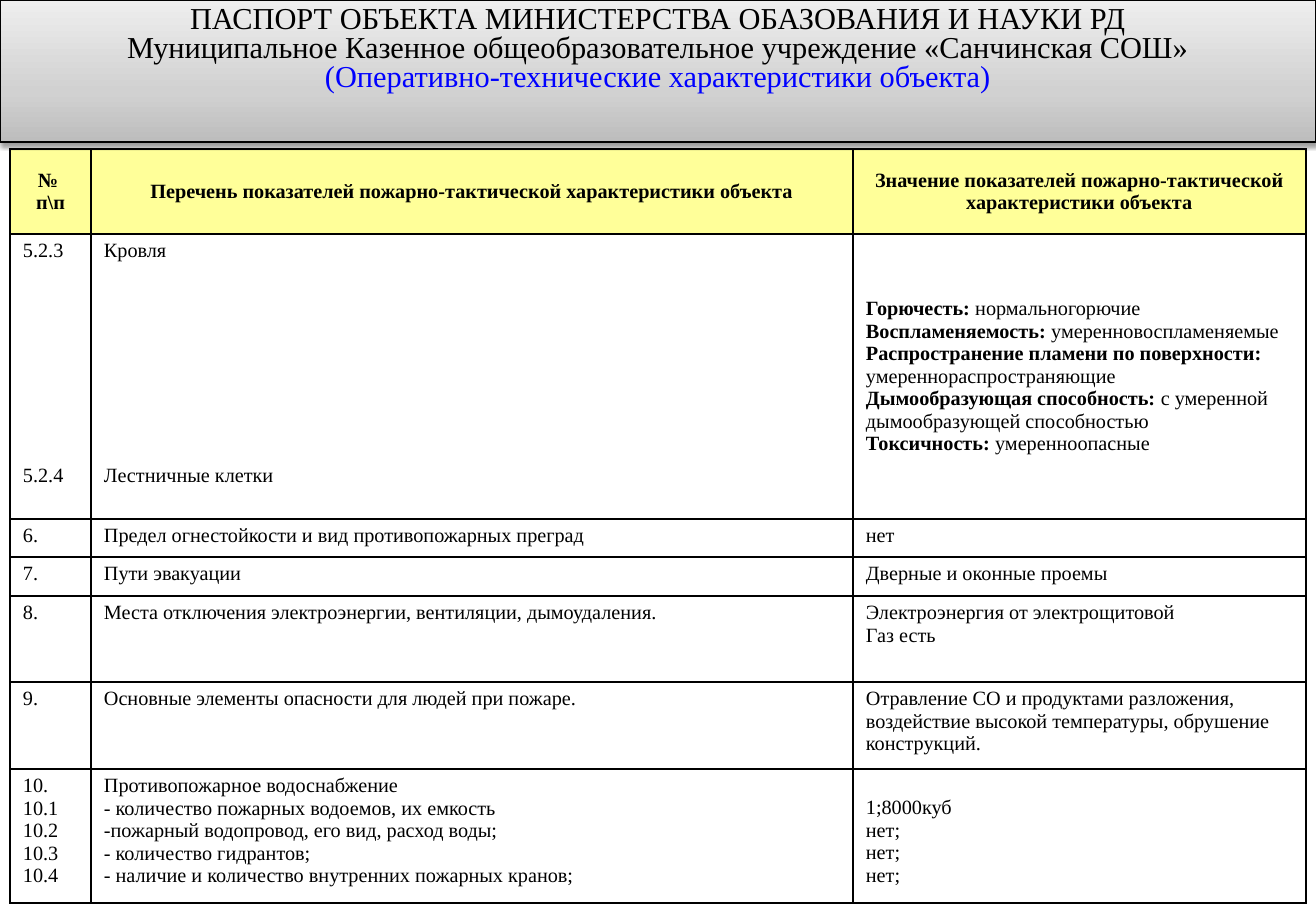
from pptx import Presentation
from pptx.dml.color import RGBColor
from pptx.enum.shapes import MSO_SHAPE
from pptx.enum.text import MSO_ANCHOR, MSO_AUTO_SIZE, PP_ALIGN
from pptx.oxml.ns import qn
from pptx.util import Emu, Pt
from lxml.etree import SubElement
from copy import deepcopy

EMU_PER_PX = 7526
FONT = "Times New Roman"
BLACK, BLUE, WHITE, YELLOW = "000000", "0000FF", "FFFFFF", "FFFF99"

HEADING = [
    ("ПАСПОРТ ОБЪЕКТА МИНИСТЕРСТВА ОБАЗОВАНИЯ И НАУКИ РД", BLACK),
    ("Муниципальное Казенное общеобразовательное учреждение «Санчинская СОШ»", BLACK),
    ("(Оперативно-технические характеристики объекта)", BLUE),
]
BANNER_STOPS = [(0, "BDBDBD"), (0.35, "D1D1D1"), (1, "EEEEEE")]
COLUMN_WIDTHS = [81, 762, 453]
ROW_HEIGHTS = [85, 285, 38, 39, 86, 87, 134]
INDICATORS = [
    ["№ \nп\\п",
     "Перечень показателей пожарно-тактической характеристики объекта",
     "Значение показателей пожарно-тактической характеристики объекта"],
    ["5.2.3\n5.2.4", "Кровля\nЛестничные клетки", ""],
    ["6.", "Предел огнестойкости и вид противопожарных преград", "нет"],
    ["7.", "Пути эвакуации", "Дверные и оконные проемы"],
    ["8.", "Места отключения электроэнергии, вентиляции, дымоудаления.",
     "Электроэнергия от электрощитовой\nГаз есть"],
    ["9.", "Основные элементы опасности для людей при пожаре.",
     "Отравление СО и продуктами разложения, воздействие высокой температуры, "
     "обрушение конструкций."],
    ["10.\n10.1\n10.2\n10.3\n10.4",
     "Противопожарное водоснабжение\n количество пожарных водоемов, их емкость\n"
     "пожарный водопровод, его вид, расход воды;\n количество гидрантов;\n"
     " наличие и количество внутренних пожарных кранов;",
     "1;8000куб\nнет;\nнет;\nнет;"],
]
ROOF_PROPERTIES = [
    ("Горючесть: ", "нормальногорючие"),
    ("Воспламеняемость: ", "умеренновоспламеняемые"),
    ("Распространение пламени по поверхности:", ""),
    ("", "умереннораспространяющие"),
    ("Дымообразующая способность: ", "с умеренной дымообразующей способностью"),
    ("Токсичность: ", "умеренноопасные"),
]


def px(length):
    return Emu(length * EMU_PER_PX)


def color(value):
    return RGBColor.from_string(value)


def format_run(run, size, bold=False, ink=BLACK):
    run.font.name = FONT
    run.font.size = Pt(size)
    run.font.bold = bold
    run.font.color.rgb = color(ink)


def add_border(cell):
    properties = cell._tc.get_or_add_tcPr()
    for position, side in enumerate(("lnL", "lnR", "lnT", "lnB")):
        border = SubElement(properties, qn(f"a:{side}"), w=str(Pt(1)))
        ink = SubElement(border, qn("a:solidFill"))
        SubElement(ink, qn("a:srgbClr"), val=BLACK)
        properties.insert(position, border)


def add_dash(paragraph):
    properties = paragraph._p.get_or_add_pPr()
    properties.set("marL", "0")
    properties.set("indent", "0")
    SubElement(properties, qn("a:buFont"), typeface=FONT)
    SubElement(properties, qn("a:buChar"), char="-")


def fill_cell(cell, text, header):
    cell.fill.solid()
    cell.fill.fore_color.rgb = color(YELLOW if header else WHITE)
    cell.margin_left = cell.margin_right = px(13)
    cell.margin_top = cell.margin_bottom = px(6)
    cell.vertical_anchor = MSO_ANCHOR.MIDDLE if header else MSO_ANCHOR.TOP
    add_border(cell)
    cell.text_frame.text = text
    for paragraph in cell.text_frame.paragraphs:
        paragraph.alignment = PP_ALIGN.CENTER if header else PP_ALIGN.LEFT
        for run in paragraph.runs:
            format_run(run, 12, header)


def fill_properties(cell):
    cell.vertical_anchor = MSO_ANCHOR.MIDDLE
    frame = cell.text_frame
    frame.text = "\n".join(label for label, _ in ROOF_PROPERTIES)
    for paragraph, (_, value) in zip(frame.paragraphs, ROOF_PROPERTIES):
        for run in paragraph.runs:
            format_run(run, 12, True)
        if value:
            value_run = paragraph.add_run()
            value_run.text = value
            format_run(value_run, 12)


def add_indicators(slide):
    indicators = slide.shapes.add_table(
        len(ROW_HEIGHTS), len(COLUMN_WIDTHS), px(10), px(149),
        px(sum(COLUMN_WIDTHS)), px(sum(ROW_HEIGHTS))).table
    indicators.first_row = indicators.horz_banding = False
    for column, width in zip(indicators.columns, COLUMN_WIDTHS):
        column.width = px(width)
    for row, height in zip(indicators.rows, ROW_HEIGHTS):
        row.height = px(height)
    for r, texts in enumerate(INDICATORS):
        for c, text in enumerate(texts):
            fill_cell(indicators.cell(r, c), text, r == 0)
    fill_properties(indicators.cell(1, 2))
    for c in (0, 1):
        stairs = indicators.cell(1, c).text_frame.paragraphs[1]
        stairs.space_before = Pt(119.5)
    for supply in indicators.cell(6, 1).text_frame.paragraphs[1:]:
        add_dash(supply)
    indicators.cell(6, 2).margin_top = px(28)


def add_banner(slide):
    banner = slide.shapes.add_shape(MSO_SHAPE.RECTANGLE, 0, 0, px(1316), px(142))
    banner.fill.gradient()
    banner.fill.gradient_angle = 90
    stop_list = banner._element.spPr.find(qn("a:gradFill")).find(qn("a:gsLst"))
    stop_list.append(deepcopy(stop_list[-1]))
    for stop, (position, shade) in zip(banner.fill.gradient_stops, BANNER_STOPS):
        stop.position = position
        stop.color.rgb = color(shade)
    banner.line.color.rgb = color(BLACK)
    banner.line.width = Pt(0.75)
    banner.shadow.inherit = False
    effects = banner._element.spPr.find(qn("a:effectLst"))
    shadow = SubElement(effects, qn("a:outerShdw"), blurRad=str(Pt(3.1)),
                        dist=str(Pt(1.6)), dir="5400000", rotWithShape="0")
    shade = SubElement(shadow, qn("a:srgbClr"), val=BLACK)
    SubElement(shade, qn("a:alpha"), val="38000")


def place_heading(slide):
    heading = slide.shapes.title
    slide.shapes._spTree.append(heading._element)
    heading.left, heading.top, heading.width, heading.height = 0, 0, px(1316), px(137)
    frame = heading.text_frame
    frame.text = "\n".join(text for text, _ in HEADING)
    frame.word_wrap = True
    frame.auto_size = MSO_AUTO_SIZE.NONE
    frame.vertical_anchor = MSO_ANCHOR.TOP
    for paragraph, (_, ink) in zip(frame.paragraphs, HEADING):
        paragraph.alignment = PP_ALIGN.CENTER
        paragraph.line_spacing = 0.8
        paragraph.space_before = Pt(0)
        format_run(paragraph.runs[0], 18, ink=ink)


def main():
    passport = Presentation()
    passport.slide_width = px(1316)
    passport.slide_height = px(911)
    slide = passport.slides.add_slide(passport.slide_layouts[5])
    add_indicators(slide)
    add_banner(slide)
    place_heading(slide)
    passport.save("out.pptx")


if __name__ == "__main__":
    main()
